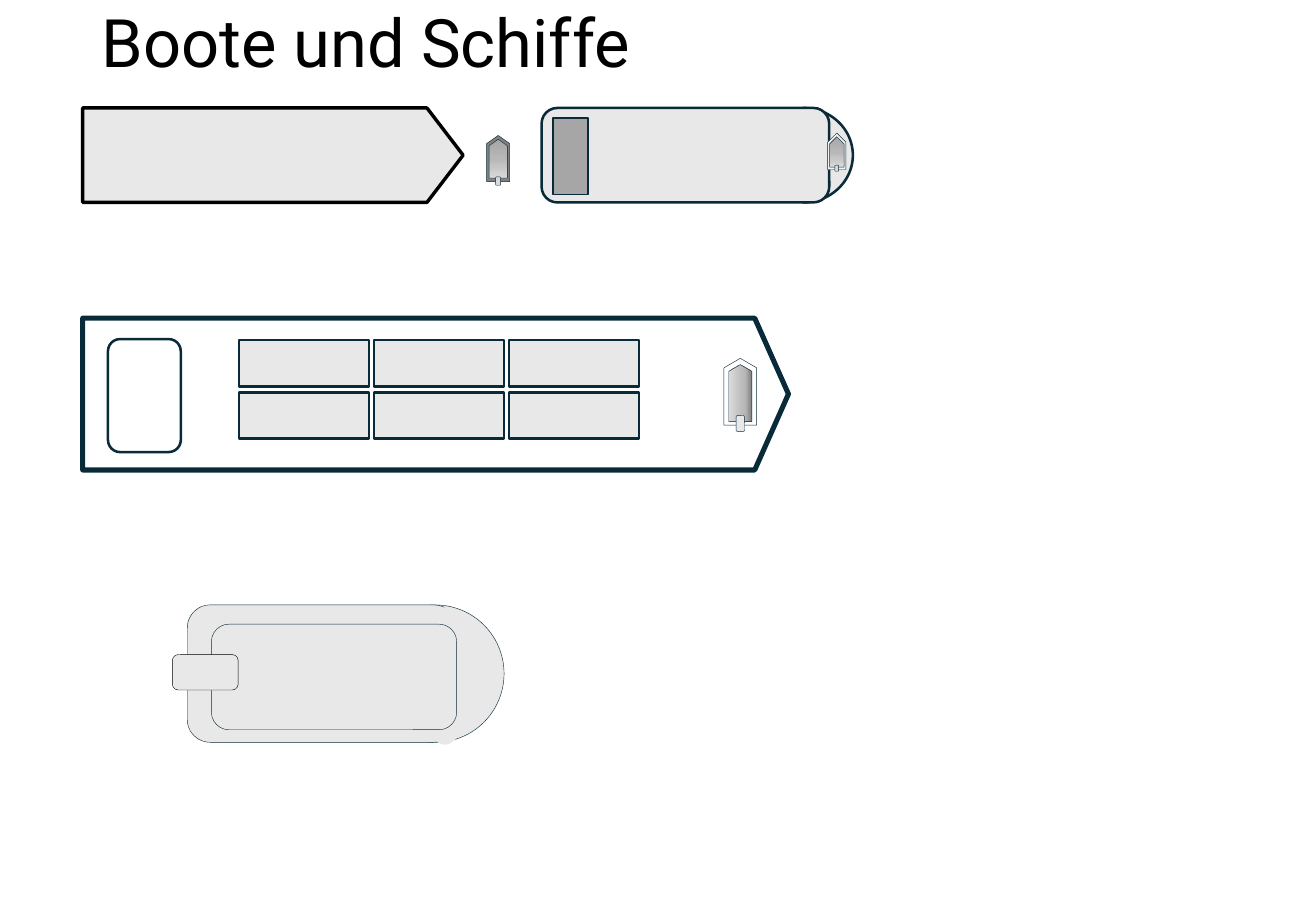
import copy

import pptx
import pptx.dml.color
import pptx.enum.shapes
import pptx.enum.text
import pptx.oxml.ns
import pptx.util

Pt = pptx.util.Pt
KIND = pptx.enum.shapes.MSO_SHAPE
COLORS = {
    "ink": "092A39", "black": "000000", "white": "FFFFFF", "hull": "E8E8E8",
    "pale": "F2F2F2", "motor": "D9D9D9", "hatch": "A6A6A6", "grey": "808080",
    "mid": "B7B7B7",
}
SOFT_SHADE = [(0, "hatch"), (0.5, "mid"), (1, "motor")]
DEEP_SHADE = [(0, "grey"), (0.29, "mid"), (1, "motor")]


def rgb(name):
    return pptx.dml.color.RGBColor.from_string(COLORS[name])


class Drawing:
    """Holds the style and the current slide; all lengths are in points."""

    font = "Roboto"

    def __init__(self, page):
        self.page = page
        self.shapes = page.shapes

    def group(self):
        """A drawing whose elements land in a new group."""
        part = Drawing(self.page)
        part.shapes = self.page.shapes.add_group_shape().shapes
        return part

    def shape(self, kind, left, top, width, height, fill="hull", line="ink",
              weight=0.25, rotation=0, adjust=None):
        shape = self.shapes.add_shape(kind, Pt(left), Pt(top), Pt(width), Pt(height))
        shape.shadow.inherit = False
        shape.rotation = rotation
        if adjust is not None:
            shape.adjustments[0] = adjust
        shape.fill.solid()
        shape.fill.fore_color.rgb = rgb(fill)
        shape.line.color.rgb = rgb(line)
        shape.line.width = Pt(weight)
        return shape

    def shade(self, shape, stops, turns):
        """Three-stop gradient from right to left, turning with the shape or not."""
        shape.fill.gradient()
        shape.fill.gradient_angle = 180
        gradient = shape._element.spPr.find(pptx.oxml.ns.qn("a:gradFill"))
        gradient.set("rotWithShape", "1" if turns else "0")
        stop_list = gradient.find(pptx.oxml.ns.qn("a:gsLst"))
        stop_list.append(copy.deepcopy(stop_list[0]))
        for stop, (position, color) in zip(shape.fill.gradient_stops, stops):
            stop.position = position
            stop.color.rgb = rgb(color)

    def upright(self, kind, center_x, center_y, length, beam, fill, adjust=None):
        """A shape that points up the slide, placed by its centre."""
        return self.shape(kind, center_x - length / 2, center_y - beam / 2,
                          length, beam, fill, rotation=270, adjust=adjust)

    def dinghy(self, x, hull, deck, motor, fill, stops, motor_fill="motor",
               adjust=(None, None), turns=True):
        """Hull, deck and motor, each given as centre y, length and beam."""
        self.upright(KIND.PENTAGON, x, *hull, fill, adjust[0])
        inside = self.upright(KIND.PENTAGON, x, *deck, fill, adjust[1])
        self.shade(inside, stops, turns)
        self.upright(KIND.ROUNDED_RECTANGLE, x, *motor, motor_fill)

    def title(self, text, left, top, width, height, size):
        box = self.shapes.add_textbox(Pt(left), Pt(top), Pt(width), Pt(height))
        frame = box.text_frame
        frame.word_wrap = True
        frame.vertical_anchor = pptx.enum.text.MSO_ANCHOR.MIDDLE
        para = frame.paragraphs[0]
        para.text = text
        para.line_spacing = 0.9
        para.font.name = self.font
        para.font.size = Pt(size)
        para.font.color.rgb = rgb("black")


def main():
    deck = pptx.Presentation()
    deck.slide_width, deck.slide_height = Pt(780), Pt(540)
    drawing = Drawing(deck.slides.add_slide(deck.slide_layouts[6]))

    # Plain barge
    drawing.shape(KIND.PENTAGON, 49, 64, 225.5, 56, line="black", weight=2, adjust=0.383)

    # Round-bowed ship with its dinghy
    ferry = drawing.group()
    ferry.shape(KIND.MOON, 476, 64, 29.5, 56, weight=1.5, rotation=180)
    ferry.shape(KIND.ROUNDED_RECTANGLE, 321, 64, 170.5, 56, weight=1.5)
    ferry.dinghy(496, (89.7, 21.6, 10.8), (90, 18, 8.6), (99.7, 3.6, 2.2),
                 "pale", SOFT_SHADE)
    ferry.shape(KIND.RECTANGLE, 327.6, 70, 21, 45.4, "hatch", weight=1)

    # Loose dinghy
    drawing.group().dinghy(295.3, (94, 27.4, 13.7), (94, 23, 10.8), (107.3, 5, 2.9),
                           "grey", SOFT_SHADE, adjust=(0.351, 0.363))

    # Motor boat
    motor_boat = drawing.group()
    motor_boat.shape(KIND.OVAL, 217.4, 358.6, 81.4, 81.4)
    motor_boat.shape(KIND.ROUNDED_RECTANGLE, 111, 358.6, 159.8, 81.4)
    motor_boat.shape(KIND.OVAL, 249, 360.7, 29.5, 80, line="hull", weight=1.5)
    motor_boat.shape(KIND.ROUNDED_RECTANGLE, 125.3, 370, 145.4, 62.6)
    motor_boat.shape(KIND.ROUNDED_RECTANGLE, 102.2, 388, 39, 21, line="black")

    drawing.title("Boote und Schiffe", 53.3, 1.4, 672.5, 52, 39.6)

    # Freighter with dinghy, cabin and containers
    drawing.shape(KIND.PENTAGON, 49, 188.6, 418.3, 90, "white", weight=3, adjust=0.222)
    drawing.group().dinghy(438.8, (232.2, 39.6, 19.4), (233, 33.8, 13.7), (251, 9.4, 5),
                           "white", DEEP_SHADE, "hull", (0.29, 0.29), turns=False)
    drawing.shape(KIND.ROUNDED_RECTANGLE, 64, 201, 43.2, 67, "white", weight=1.5)
    for column in range(3):
        for row in range(2):
            drawing.shape(KIND.RECTANGLE, 141.8 + 80 * column, 201.6 + 31 * row,
                          77, 27.4, weight=1.5)

    deck.save("out.pptx")


if __name__ == "__main__":
    main()
